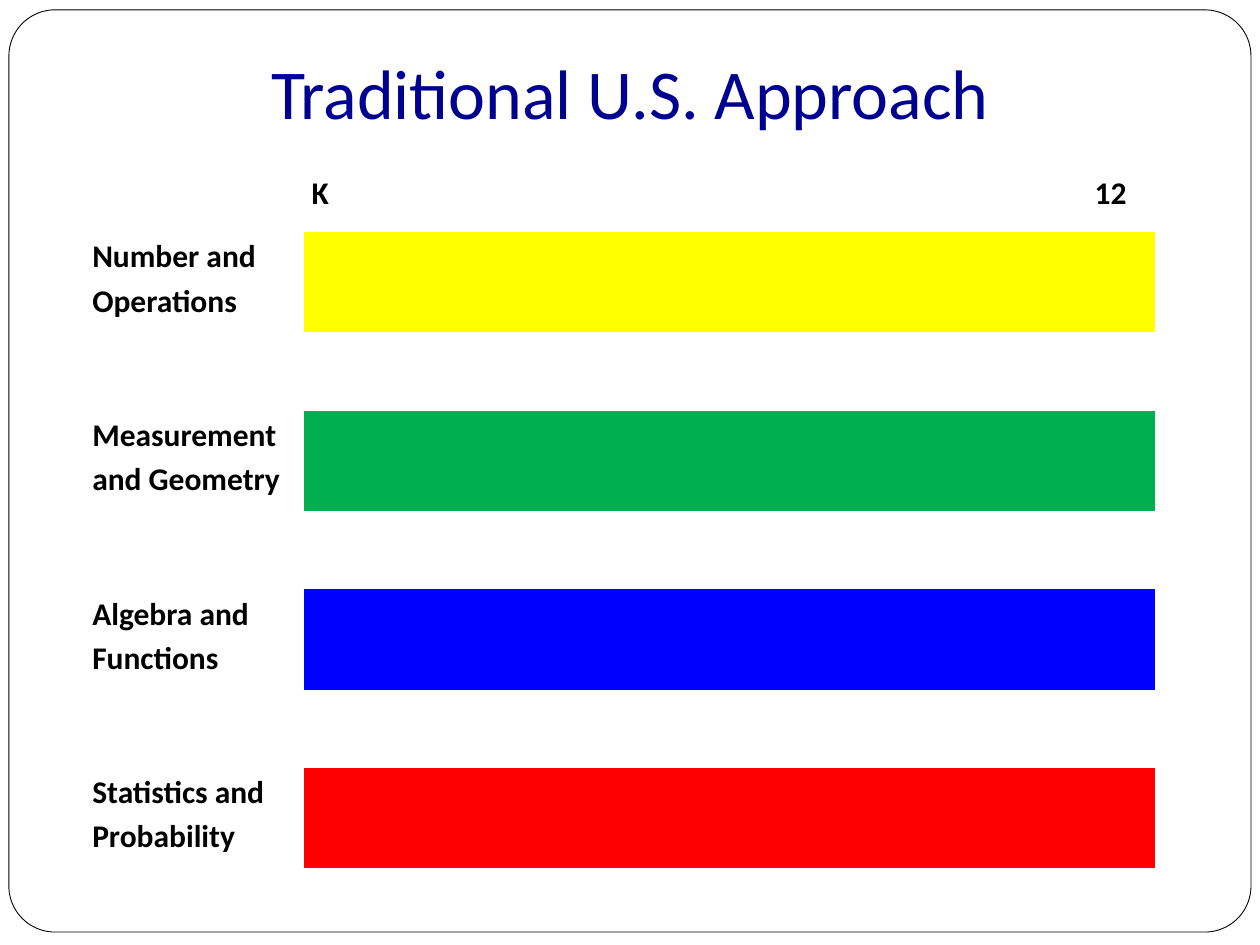
from lxml import etree
from pptx import Presentation
from pptx.dml.color import RGBColor
from pptx.enum.shapes import MSO_SHAPE
from pptx.enum.text import MSO_ANCHOR, PP_ALIGN
from pptx.oxml.ns import qn
from pptx.util import Cm, Pt

ROUNDED = MSO_SHAPE.ROUNDED_RECTANGLE
BOTTOM = MSO_ANCHOR.BOTTOM
CENTER = PP_ALIGN.CENTER

WHITE = RGBColor(0xFF, 0xFF, 0xFF)
BLACK = RGBColor(0x00, 0x00, 0x00)
NAVY = RGBColor(0x00, 0x00, 0x90)
YELLOW = RGBColor(0xFF, 0xFF, 0x00)
GREEN = RGBColor(0x00, 0xB0, 0x50)
BLUE = RGBColor(0x00, 0x00, 0xFF)
RED = RGBColor(0xFF, 0x00, 0x00)

NO_STYLE_NO_GRID = "{2D5ABB26-0587-4C30-8999-92F81FD0307C}"
TITLE_FONT = {"name": "Calibri", "size": Pt(40)}
TABLE_FONT = {"name": "Calibri", "size": Pt(18), "bold": True}
CELL_MARGINS = {"margin_left": Cm(0.16), "margin_right": Cm(0.16),
                "margin_top": 0, "margin_bottom": 0}
STRANDS = [
    ("Number and Operations", YELLOW),
    ("Measurement and Geometry", GREEN),
    ("Algebra and Functions", BLUE),
    ("Statistics and Probability", RED),
]


def write(para, text, font, color):
    span = para.add_run()
    span.text = text
    for name, value in font.items():
        setattr(span.font, name, value)
    span.font.color.rgb = color


def write_cell(cell, text):
    for name, value in CELL_MARGINS.items():
        setattr(cell, name, value)
    para = cell.text_frame.paragraphs[0]
    para.line_spacing = 1.15
    write(para, text, TABLE_FONT, BLACK)
    return para


deck = Presentation()
deck.slide_width, deck.slide_height = Cm(25.4), Cm(19.05)
page = deck.slides.add_slide(deck.slide_layouts[6])

# Rounded page frame
frame = page.shapes.add_shape(ROUNDED, Cm(0.18), Cm(0.2), Cm(25.04), Cm(18.59))
frame.adjustments[0] = 0.05
frame.shadow.inherit = False
frame.fill.solid()
frame.fill.fore_color.rgb = WHITE
frame.line.color.rgb = BLACK
frame.line.width = Pt(0.5)

# Table of strands: a header row, then bars separated by empty rows
row_heights = [Cm(1.27)] + [Cm(2.02), Cm(1.58)] * (len(STRANDS) - 1) + [Cm(2.02)]
column_widths = [Cm(4.42), Cm(17.17)]
table = page.shapes.add_table(
    len(row_heights), len(column_widths), Cm(1.7), Cm(3.41),
    sum(column_widths), sum(row_heights)).table
table.first_row = table.horz_banding = False
table._tbl.tblPr.find(qn("a:tableStyleId")).text = NO_STYLE_NO_GRID
for row, height in zip(table.rows, row_heights):
    row.height = height
for column, width in zip(table.columns, column_widths):
    column.width = width
for cell in table.iter_cells():
    cell.fill.background()

# Grade range, with the last grade on a right-aligned tab stop
grades = write_cell(table.cell(0, 1), "K\t12")
tabs = etree.SubElement(grades._p.get_or_add_pPr(), qn("a:tabLst"))
etree.SubElement(tabs, qn("a:tab"), pos=str(Cm(16.43)), algn="r")

# Strand names and bars
for index, (strand, color) in enumerate(STRANDS):
    row = 1 + 2 * index
    write_cell(table.cell(row, 0), strand)
    bar = table.cell(row, 1)
    bar.fill.solid()
    bar.fill.fore_color.rgb = color

# Title
title = page.shapes.add_textbox(Cm(1.27), Cm(0.86), Cm(22.86), Cm(1.96)).text_frame
title.word_wrap = True
title.vertical_anchor = BOTTOM
title.paragraphs[0].alignment = CENTER
write(title.paragraphs[0], "Traditional U.S. Approach", TITLE_FONT, NAVY)

deck.save("out.pptx")
